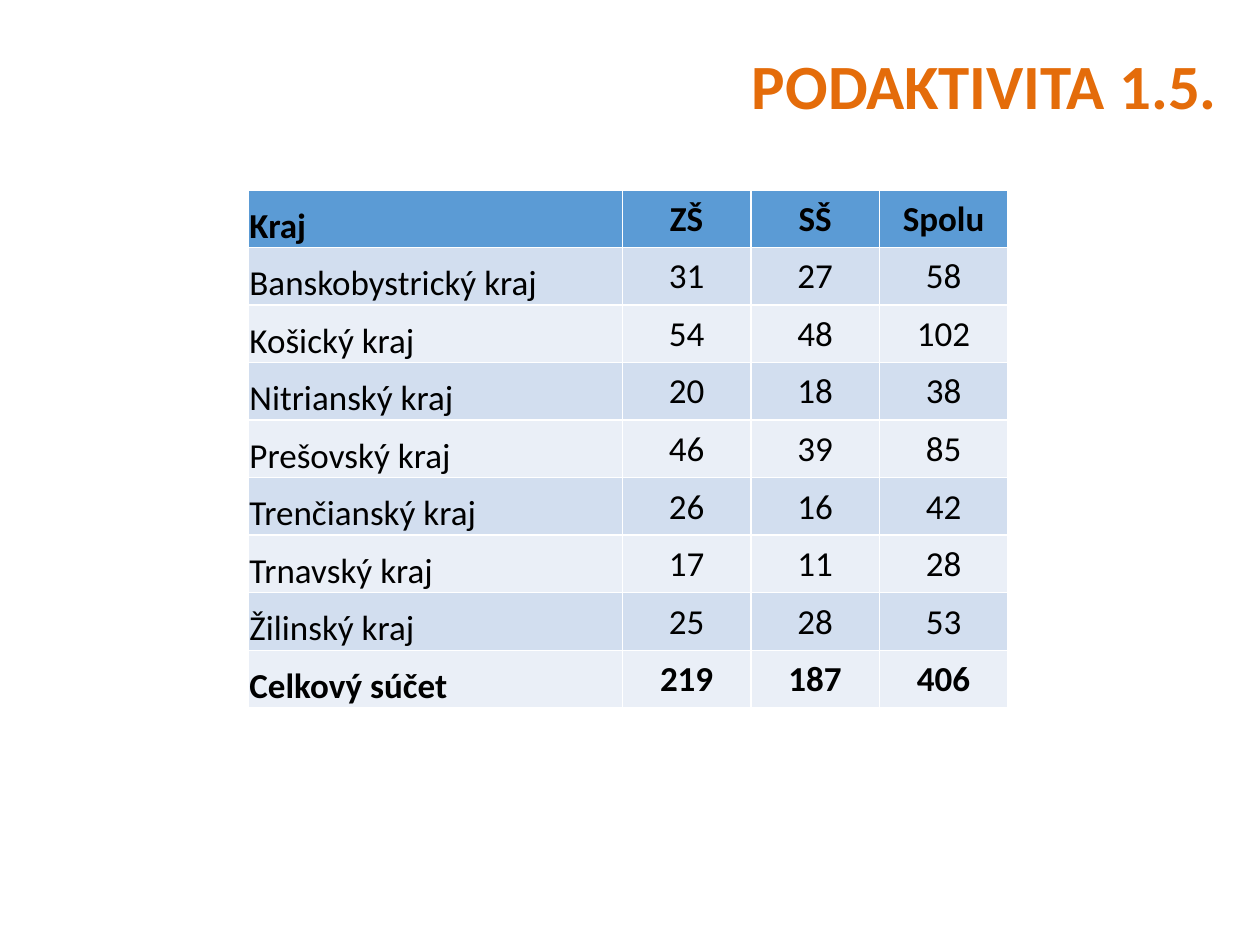
"""Build the regional school count slide for subactivity 1.5."""
from pptx import Presentation
from pptx.dml.color import RGBColor
from pptx.enum.text import MSO_ANCHOR, PP_ALIGN
from pptx.util import Inches, Pt

HEADER = ["Kraj", "ZŠ", "SŠ", "Spolu"]
REGIONS = [
    ["Banskobystrický kraj", 31, 27, 58],
    ["Košický kraj", 54, 48, 102],
    ["Nitrianský kraj", 20, 18, 38],
    ["Prešovský kraj", 46, 39, 85],
    ["Trenčianský kraj", 26, 16, 42],
    ["Trnavský kraj", 17, 11, 28],
    ["Žilinský kraj", 25, 28, 53],
]
TOTAL = ["Celkový súčet", 219, 187, 406]
ROWS = [HEADER, *REGIONS, TOTAL]
COL_WIDTHS = [Inches(2.97)] + [Inches(1.02)] * 3
ROW_HEIGHT = Inches(0.457)


def color(value):
    return RGBColor.from_string(value)


def write(tf, text, align, size, value, bold):
    p = tf.paragraphs[0]
    p.alignment = align
    r = p.add_run()
    r.text = str(text)
    for name, setting in {"name": "Calibri", "size": Pt(size), "bold": bold}.items():
        setattr(r.font, name, setting)
    r.font.color.rgb = color(value)
    return p


prs = Presentation()
prs.slide_width, prs.slide_height = Inches(10), Inches(7.5)
W, H = prs.slide_width, prs.slide_height
s = prs.slides.add_slide(prs.slide_layouts[5])

title = s.shapes.title
frame = {"left": 0.352, "top": 0.052, "width": 0.624, "height": 0.085}
for name, share in frame.items():
    setattr(title, name, int(share * (W if name in ("left", "width") else H)))
title.text_frame.vertical_anchor = MSO_ANCHOR.MIDDLE
p = write(title.text_frame, "PODAKTIVITA 1.5.", PP_ALIGN.RIGHT, 36, "E46C0A", True)
p.line_spacing = 0.9

table = s.shapes.add_table(
    len(ROWS), len(HEADER), int(W * 0.197), int(H * 0.201),
    sum(COL_WIDTHS), ROW_HEIGHT * len(ROWS),
).table
for column, width in zip(table.columns, COL_WIDTHS):
    column.width = width

for i, values in enumerate(ROWS):
    table.rows[i].height = ROW_HEIGHT
    fill = "5B9BD5" if i == 0 else ("EAEFF7", "D2DEEF")[i % 2]
    for j, value in enumerate(values):
        cell = table.cell(i, j)
        cell.fill.solid()
        cell.fill.fore_color.rgb = color(fill)
        layout = {
            "margin_left": Inches(0.01),
            "margin_top": Inches(0.01),
            "margin_right": Inches(0.01),
            "margin_bottom": 0,
            "vertical_anchor": MSO_ANCHOR.MIDDLE if j else MSO_ANCHOR.BOTTOM,
        }
        for name, setting in layout.items():
            setattr(cell, name, setting)
        align = PP_ALIGN.CENTER if j else PP_ALIGN.LEFT
        write(cell.text_frame, value, align, 20, "000000", values in (HEADER, TOTAL))

prs.save("out.pptx")
